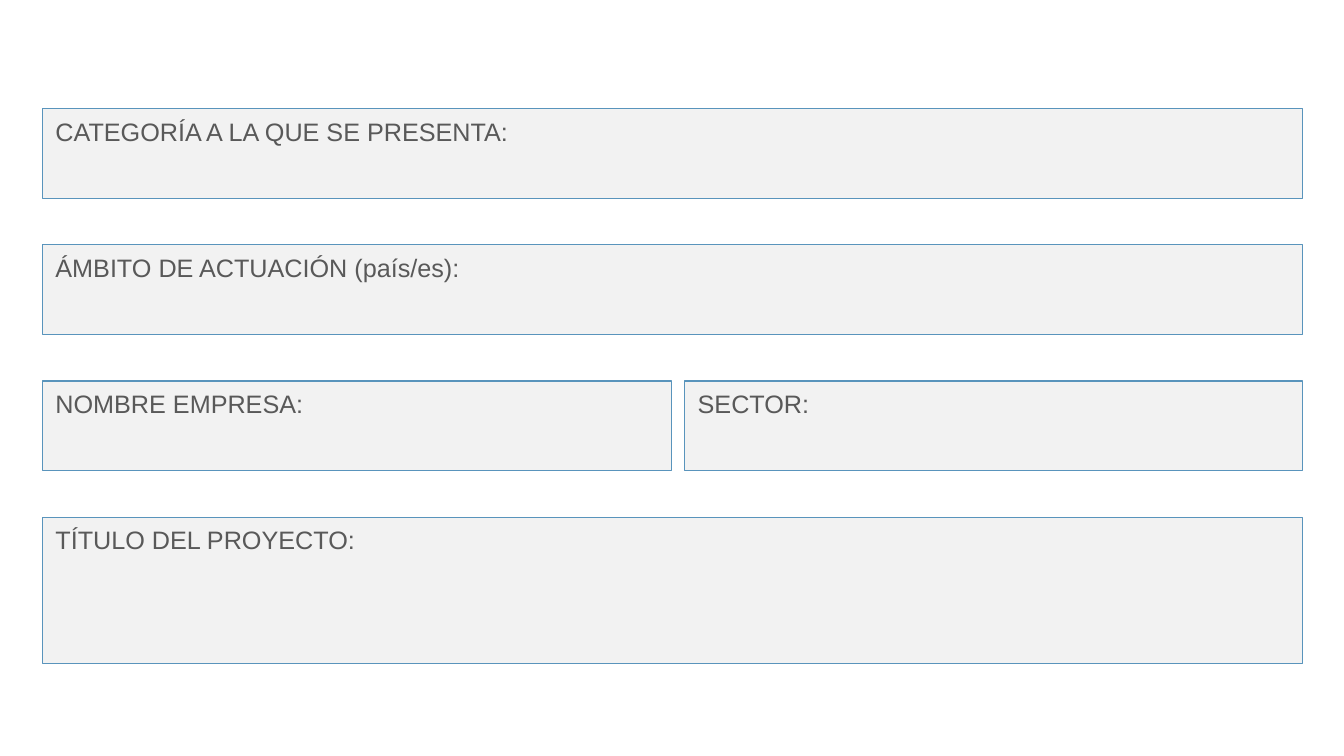
from pptx import Presentation
from pptx.dml.color import RGBColor
from pptx.enum.shapes import MSO_SHAPE
from pptx.enum.text import MSO_ANCHOR, PP_ALIGN
from pptx.util import Inches, Pt

ROWS = [
    (0.89, [("CATEGORÍA A LA QUE SE PRESENTA:", 12.5)]),
    (0.89, [("ÁMBITO DE ACTUACIÓN (país/es):", 12.5)]),
    (0.89, [("NOMBRE EMPRESA:", 6.24), ("SECTOR:", 6.13)]),
    (1.45, [("TÍTULO DEL PROYECTO:", 12.5)]),
]

FIELD_FILL = RGBColor(0xF2, 0xF2, 0xF2)
FIELD_LINE = RGBColor(0x59, 0x94, 0xBC)
LABEL_COLOR = RGBColor(0x59, 0x59, 0x59)

LEFT, TOP = 0.42, 1.08
ROW_GAP, COLUMN_GAP = 0.46, 0.13


def add_field(slide, label, left, top, width, height):
    shape = slide.shapes.add_shape(
        MSO_SHAPE.RECTANGLE, Inches(left), Inches(top), Inches(width), Inches(height)
    )
    shape.shadow.inherit = False
    shape.fill.solid()
    shape.fill.fore_color.rgb = FIELD_FILL
    shape.line.color.rgb = FIELD_LINE
    shape.line.width = Pt(0.75)

    text_frame = shape.text_frame
    text_frame.word_wrap = True
    text_frame.vertical_anchor = MSO_ANCHOR.TOP
    text_frame.margin_left = text_frame.margin_right = Inches(0.13)
    text_frame.margin_top = text_frame.margin_bottom = Inches(0.07)
    text_frame.text = label
    paragraph = text_frame.paragraphs[0]
    paragraph.alignment = PP_ALIGN.LEFT
    font = paragraph.runs[0].font
    font.name = "Arial"
    font.size = Pt(18)
    font.color.rgb = LABEL_COLOR


def main():
    presentation = Presentation()
    presentation.slide_width = Inches(13.33)
    presentation.slide_height = Inches(7.5)
    slide = presentation.slides.add_slide(presentation.slide_layouts[6])

    top = TOP
    for height, fields in ROWS:
        left = LEFT
        for label, width in fields:
            add_field(slide, label, left, top, width, height)
            left += width + COLUMN_GAP
        top += height + ROW_GAP

    presentation.save("out.pptx")


if __name__ == "__main__":
    main()
